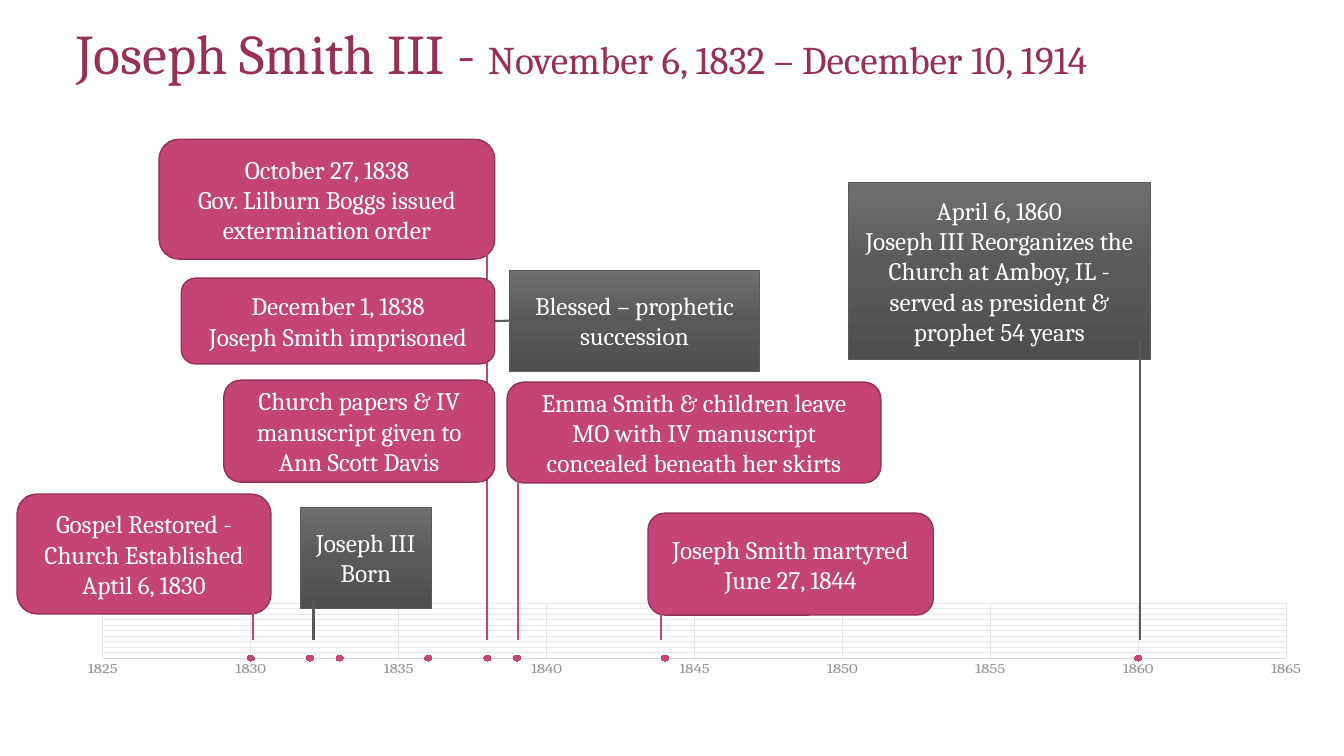
from copy import deepcopy

from lxml.etree import SubElement
from pptx import Presentation
from pptx.chart.data import XyChartData
from pptx.dml.color import RGBColor
from pptx.enum.chart import XL_CHART_TYPE as ChartType, XL_MARKER_STYLE as Marker
from pptx.enum.chart import XL_TICK_MARK as TickMark
from pptx.enum.shapes import MSO_CONNECTOR as Connector, MSO_SHAPE as Shape
from pptx.enum.text import MSO_ANCHOR as Anchor, MSO_AUTO_SIZE as AutoSize, PP_ALIGN as Align
from pptx.oxml.ns import qn
from pptx.util import Cm, Pt

FONT = "Cambria"
COLORS = {
    "title": "972F57", "rose": "C44475", "rose_edge": "913257", "grey": "595959",
    "grey_top": "6F6F6F", "grey_bottom": "4F4F4F", "white": "FFFFFF",
    "label": "939393", "axis": "D6D6D6", "grid": "E6E6E6",
}
TITLE = [("Joseph Smith III - ", 40), ("November 6, 1832 – December 10, 1914", 28)]
YEARS = [1830, 1832, 1833, 1836, 1838, 1839, 1844, 1860]
AXIS_RANGE = (1825, 1865, 5)
CHART_AREA = (0.66, 15.14, 32.77, 1.91)
PLOT_LAYOUT = {"x": 0.059, "y": 0.04, "w": 0.91, "h": 0.906}
STEM_BOTTOM = 16.13

# key: (kind, box in cm, lines, stem (x, top) or None)
EVENTS = {
    "restored": ("rose", (0.43, 12.45, 6.4, 3.02),
                 "Gospel Restored - Church Established\nAptil 6, 1830", (6.38, 12.8)),
    "order": ("rose", (4.01, 3.51, 8.46, 3.02),
              "October 27, 1838\nGov. Lilburn Boggs issued extermination order", (12.27, 4.55)),
    "prison": ("rose", (4.57, 7.01, 7.9, 2.16),
               "December 1, 1838\nJoseph Smith imprisoned", None),
    "papers": ("rose", (5.64, 9.58, 6.83, 2.57),
               "Church papers & IV manuscript given to Ann Scott Davis", None),
    "martyred": ("rose", (16.33, 12.93, 7.19, 2.57),
                 "Joseph Smith martyred June 27, 1844", (16.66, 15.14)),
    "emma": ("rose", (12.78, 9.63, 9.42, 2.54),
             "Emma Smith & children leave MO with IV manuscript concealed beneath her skirts",
             (13.06, 10.77)),
    "born": ("grey", (7.57, 12.78, 3.3, 2.54), "Joseph III Born", (7.9, 15.14)),
    "blessed": ("grey", (12.83, 6.81, 6.32, 2.54), "Blessed – prophetic succession", None),
    "reorganized": ("grey", (21.39, 4.6, 7.59, 4.45),
                    "April 6, 1860\nJoseph III Reorganizes the Church at Amboy, IL - "
                    "served as president & prophet 54 years", (28.73, 8.59)),
}


def rgb(name):
    return RGBColor.from_string(COLORS[name])


def style_font(font, size, color):
    font.name, font.size = FONT, Pt(size)
    font.color.rgb = rgb(color)


def style_line(line, color, width):
    line.color.rgb = rgb(color)
    line.width = Pt(width)


def add_title(slide):
    title = slide.shapes.title
    title.left, title.top, title.width, title.height = map(Cm, (1.68, 0.53, 30.4, 3.3))
    frame = title.text_frame
    frame.auto_size, frame.vertical_anchor = AutoSize.NONE, Anchor.TOP
    heading = frame.paragraphs[0]
    heading.alignment, heading.line_spacing = Align.LEFT, 0.9
    for words, size in TITLE:
        run = heading.add_run()
        run.text = words
        style_font(run.font, size, "title")


def add_timeline(slide):
    data = XyChartData()
    points = data.add_series("Series 1")
    for year in YEARS:
        points.add_data_point(year, 0)
    chart = slide.shapes.add_chart(
        ChartType.XY_SCATTER, *map(Cm, CHART_AREA), data).chart
    chart.has_legend = chart.has_title = False
    style_font(chart.font, 10, "grey")
    plot = chart.plots[0]
    plot.vary_by_categories = False
    series = plot.series[0]
    series.smooth = False
    series.format.line.fill.background()
    series.marker.style, series.marker.size = Marker.CIRCLE, 5
    series.marker.format.fill.solid()
    series.marker.format.fill.fore_color.rgb = rgb("rose")
    series.marker.format.line.color.rgb = rgb("rose")

    years, heights = chart.category_axis, chart.value_axis
    for axis, limits in ((years, AXIS_RANGE), (heights, (0, 1, 0.1))):
        axis.minimum_scale, axis.maximum_scale, axis.major_unit = limits
        axis.has_major_gridlines = True
        style_line(axis.major_gridlines.format.line, "grid", 0.75)
        axis.major_tick_mark = axis.minor_tick_mark = TickMark.NONE
    heights.visible = False
    style_font(years.tick_labels.font, 12, "label")
    years.tick_labels.number_format = "General"
    years.tick_labels.number_format_is_linked = False
    style_line(years.format.line, "axis", 0.75)

    plot_area = chart._chartSpace.find(".//" + qn("c:plotArea"))
    layout = plot_area.find(qn("c:layout"))
    if layout is None:
        layout = SubElement(plot_area, qn("c:layout"))
        plot_area.insert(0, layout)
    manual = SubElement(layout, qn("c:manualLayout"))
    settings = {"layoutTarget": "inner", "xMode": "edge", "yMode": "edge", **PLOT_LAYOUT}
    for tag, value in settings.items():
        SubElement(manual, qn("c:" + tag)).set("val", str(value))


def fill_gradient(box):
    box.fill.gradient()
    box.fill.gradient_angle = 270
    stops = box._element.spPr.find(".//" + qn("a:gsLst"))
    stops.append(deepcopy(stops[-1]))
    shades = ("grey_top", "grey"), ("grey_bottom",)
    for index, shade in enumerate(shades[0] + shades[1]):
        stop = box.fill.gradient_stops[index]
        stop.position = index / 2
        stop.color.rgb = rgb(shade)


def add_event(slide, kind, area, words):
    outline = Shape.ROUNDED_RECTANGLE if kind == "rose" else Shape.RECTANGLE
    box = slide.shapes.add_shape(outline, *map(Cm, area))
    box.shadow.inherit = False
    if kind == "rose":
        box.fill.solid()
        box.fill.fore_color.rgb = rgb("rose")
        style_line(box.line, "rose_edge", 1)
    else:
        fill_gradient(box)
        style_line(box.line, "grey", 0.5)
    frame = box.text_frame
    frame.word_wrap, frame.vertical_anchor = True, Anchor.MIDDLE
    frame.text = words
    for paragraph in frame.paragraphs:
        paragraph.alignment = Align.CENTER
        for run in paragraph.runs:
            style_font(run.font, 18, "white")
    return box


def add_line(slide, color, ends):
    line = slide.shapes.add_connector(Connector.STRAIGHT, *map(Cm, ends))
    style_line(line.line, color, 1.5)
    SubElement(line._element.spPr, qn("a:effectLst"))
    return line


def main():
    deck = Presentation()
    deck.slide_width, deck.slide_height = Cm(33.87), Cm(19.05)
    slide = deck.slides.add_slide(deck.slide_layouts[5])
    add_title(slide)
    add_timeline(slide)
    boxes = {}
    for key, (kind, area, words, stem) in EVENTS.items():
        boxes[key] = add_event(slide, kind, area, words)
        if stem:
            x, top = stem
            add_line(slide, kind, (x, STEM_BOTTOM, x, top))
    link = add_line(slide, "grey", (12.47, 8.09, 12.83, 8.08))
    link.begin_connect(boxes["prison"], 3)
    link.end_connect(boxes["blessed"], 1)
    deck.save("out.pptx")


if __name__ == "__main__":
    main()
